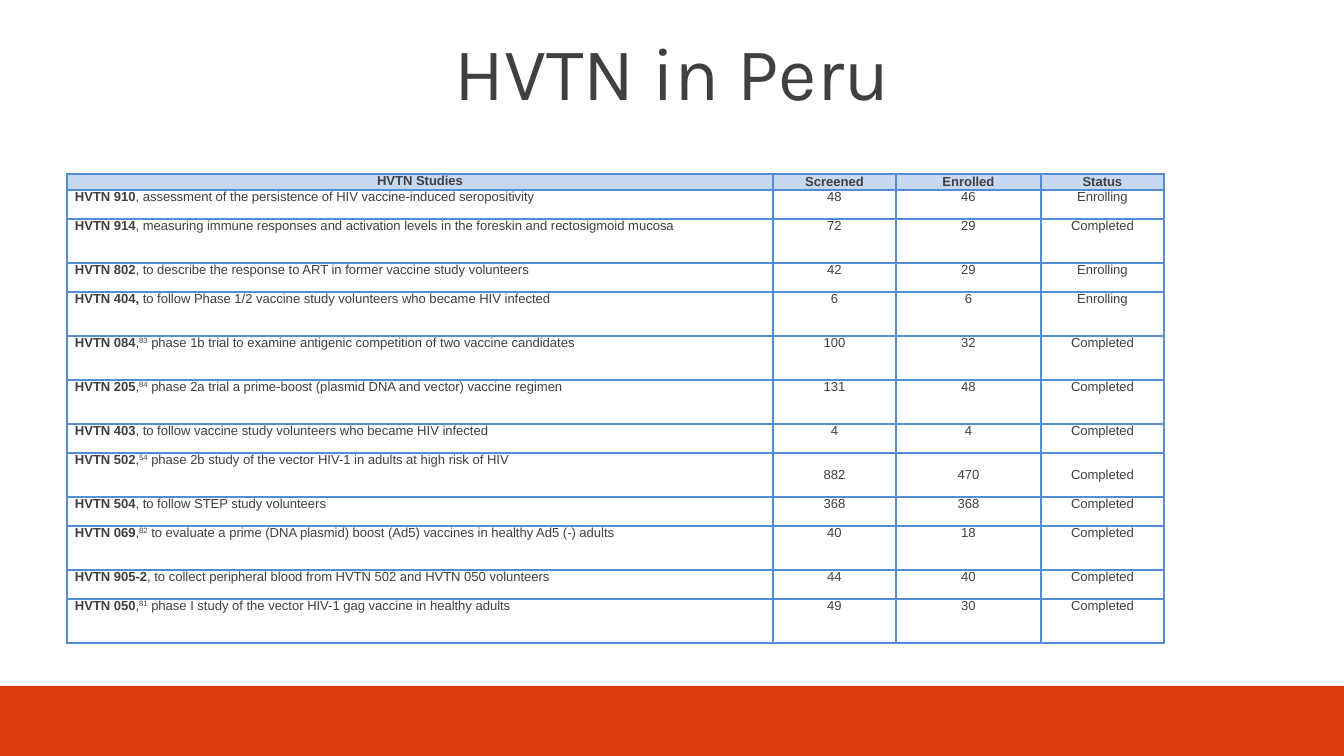
import pptx
import pptx.dml.color
import pptx.enum.shapes
import pptx.enum.text
import pptx.oxml.ns
import pptx.util
from lxml import etree

PX = 914400 / 134.4
INK, RULE, HEADER_FILL, BAND = "404041", "548DD4", "C6D9F1", "DC3B0F"
ALIGN = pptx.enum.text.PP_ALIGN
ANCHOR = pptx.enum.text.MSO_ANCHOR

HEADERS = ["HVTN Studies", "Screened", "Enrolled", "Status"]
COLUMN_WIDTHS = [706, 123, 145, 123]
BLANK_ROW, HEADER_ROW, SHORT_ROW, TALL_ROW = 29, 16, 29, 44

# Study, reference number, description, screened, enrolled, status, row height
STUDIES = [
    ("HVTN 910", "", ", assessment of the persistence of HIV vaccine-induced seropositivity",
     48, 46, "Enrolling", SHORT_ROW),
    ("HVTN 914", "", ", measuring immune responses and activation levels in the foreskin and rectosigmoid mucosa",
     72, 29, "Completed", TALL_ROW),
    ("HVTN 802", "", ", to describe the response to ART in former vaccine study volunteers",
     42, 29, "Enrolling", SHORT_ROW),
    ("HVTN 404,", "", " to follow Phase 1/2 vaccine study volunteers who became HIV infected",
     6, 6, "Enrolling", TALL_ROW),
    ("HVTN 084", "83", " phase 1b trial to examine antigenic competition of two vaccine candidates",
     100, 32, "Completed", TALL_ROW),
    ("HVTN 205", "84", " phase 2a trial a prime-boost (plasmid DNA and vector) vaccine regimen",
     131, 48, "Completed", TALL_ROW),
    ("HVTN 403", "", ", to follow vaccine study volunteers who became HIV infected",
     4, 4, "Completed", SHORT_ROW),
    ("HVTN 502", "54", " phase 2b study of the vector HIV-1 in adults at high risk of HIV",
     882, 470, "Completed", TALL_ROW),
    ("HVTN 504", "", ", to follow STEP study volunteers",
     368, 368, "Completed", SHORT_ROW),
    ("HVTN 069", "82", " to evaluate a prime (DNA plasmid) boost (Ad5) vaccines in healthy Ad5 (-) adults",
     40, 18, "Completed", TALL_ROW),
    ("HVTN 905-2", "", ", to collect peripheral blood from HVTN 502 and HVTN 050 volunteers",
     44, 40, "Completed", SHORT_ROW),
    ("HVTN 050", "81", " phase I study of the vector HIV-1 gag vaccine in healthy adults",
     49, 30, "Completed", TALL_ROW),
]
CENTRED_STUDY = "HVTN 502"


def px(length):
    return round(length * PX)


def color(value):
    return pptx.dml.color.RGBColor.from_string(value)


def apply(target, formats):
    for name, value in formats.items():
        setattr(target, name, value)


def add_span(para, text, size=7, font="Arial", bold=False, raised=False):
    span = para.add_run()
    span.text = text
    apply(span.font, {"size": pptx.util.Pt(size), "name": font, "bold": bold})
    span.font.color.rgb = color(INK)
    if raised:
        span._r.get_or_add_rPr().set("baseline", "30000")


def draw_borders(cell, sides):
    properties = cell._tc.get_or_add_tcPr()
    for position, side in enumerate(sides):
        line = etree.Element(pptx.oxml.ns.qn(f"a:ln{side}"), w=str(pptx.util.Pt(1)))
        fill = etree.SubElement(line, pptx.oxml.ns.qn("a:solidFill"))
        etree.SubElement(fill, pptx.oxml.ns.qn("a:srgbClr"), val=RULE)
        properties.insert(position, line)


def fill_cell(cell, spans, align=ALIGN.CENTER, anchor=ANCHOR.TOP, fill=None):
    """Write a list of (text, span formats) into a bordered cell."""
    apply(cell, {"margin_left": px(8), "margin_right": px(8), "margin_top": 0,
                 "margin_bottom": 0, "vertical_anchor": anchor})
    if fill:
        cell.fill.solid()
        cell.fill.fore_color.rgb = color(fill)
    else:
        cell.fill.background()
    draw_borders(cell, "LRTB")
    para = cell.text_frame.paragraphs[0]
    apply(para, {"alignment": align, "space_after": pptx.util.Pt(3)})
    for text, formats in spans:
        add_span(para, text, **formats)


def add_blank_row(table):
    for cell in table.rows[0].cells:
        apply(cell, {"margin_top": 0, "margin_bottom": 0})
        cell.fill.background()
        draw_borders(cell, "B")
        para = cell.text_frame.paragraphs[0]
        etree.SubElement(para._p, pptx.oxml.ns.qn("a:endParaRPr"), sz="700")
    table.cell(0, 0).merge(table.cell(0, len(HEADERS) - 1))


def add_study_table(page, left, top):
    heights = [BLANK_ROW, HEADER_ROW] + [study[-1] for study in STUDIES]
    frame = page.shapes.add_table(len(heights), len(COLUMN_WIDTHS), px(left), px(top),
                                  px(sum(COLUMN_WIDTHS)), px(sum(heights)))
    table = frame.table
    apply(table, {"first_row": False, "horz_banding": False})
    for column, width in zip(table.columns, COLUMN_WIDTHS):
        column.width = px(width)
    for row, height in zip(table.rows, heights):
        row.height = px(height)

    add_blank_row(table)
    for column, header in enumerate(HEADERS):
        fill_cell(table.cell(1, column), [(header, {"bold": True})], fill=HEADER_FILL,
                  anchor=ANCHOR.MIDDLE if column else ANCHOR.TOP)
    for row, (study, reference, description, *results, _) in enumerate(STUDIES, 2):
        spans = [(study, {"bold": True})]
        if reference:
            spans += [(",", {}), (reference, {"raised": True})]
        spans.append((description, {}))
        fill_cell(table.cell(row, 0), spans, align=ALIGN.LEFT)
        anchor = ANCHOR.MIDDLE if study == CENTRED_STUDY else ANCHOR.TOP
        for column, result in enumerate(results, 1):
            fill_cell(table.cell(row, column), [(str(result), {})], anchor=anchor)


def add_title(page, left, top, width, height):
    box = page.shapes.add_textbox(px(left), px(top), px(width), px(height))
    apply(box.text_frame, {"word_wrap": True, "vertical_anchor": ANCHOR.MIDDLE})
    para = box.text_frame.paragraphs[0]
    para.alignment = ALIGN.CENTER
    add_span(para, "HVTN in Peru", size=40, font="Karla")


def add_footer_band(page, left, top, width, height):
    band = page.shapes.add_shape(pptx.enum.shapes.MSO_SHAPE.RECTANGLE,
                                 px(left), px(top), px(width), px(height))
    band.shadow.inherit = False
    band.fill.solid()
    band.fill.fore_color.rgb = color(BAND)
    band.line.fill.background()


def main():
    deck = pptx.Presentation()
    apply(deck, {"slide_width": px(1344), "slide_height": px(756)})
    page = deck.slides.add_slide(deck.slide_layouts[6])
    add_footer_band(page, 0, 686, 1344, 70)
    add_title(page, 67, 8, 1210, 126)
    add_study_table(page, 67, 145)
    deck.save("out.pptx")


if __name__ == "__main__":
    main()
